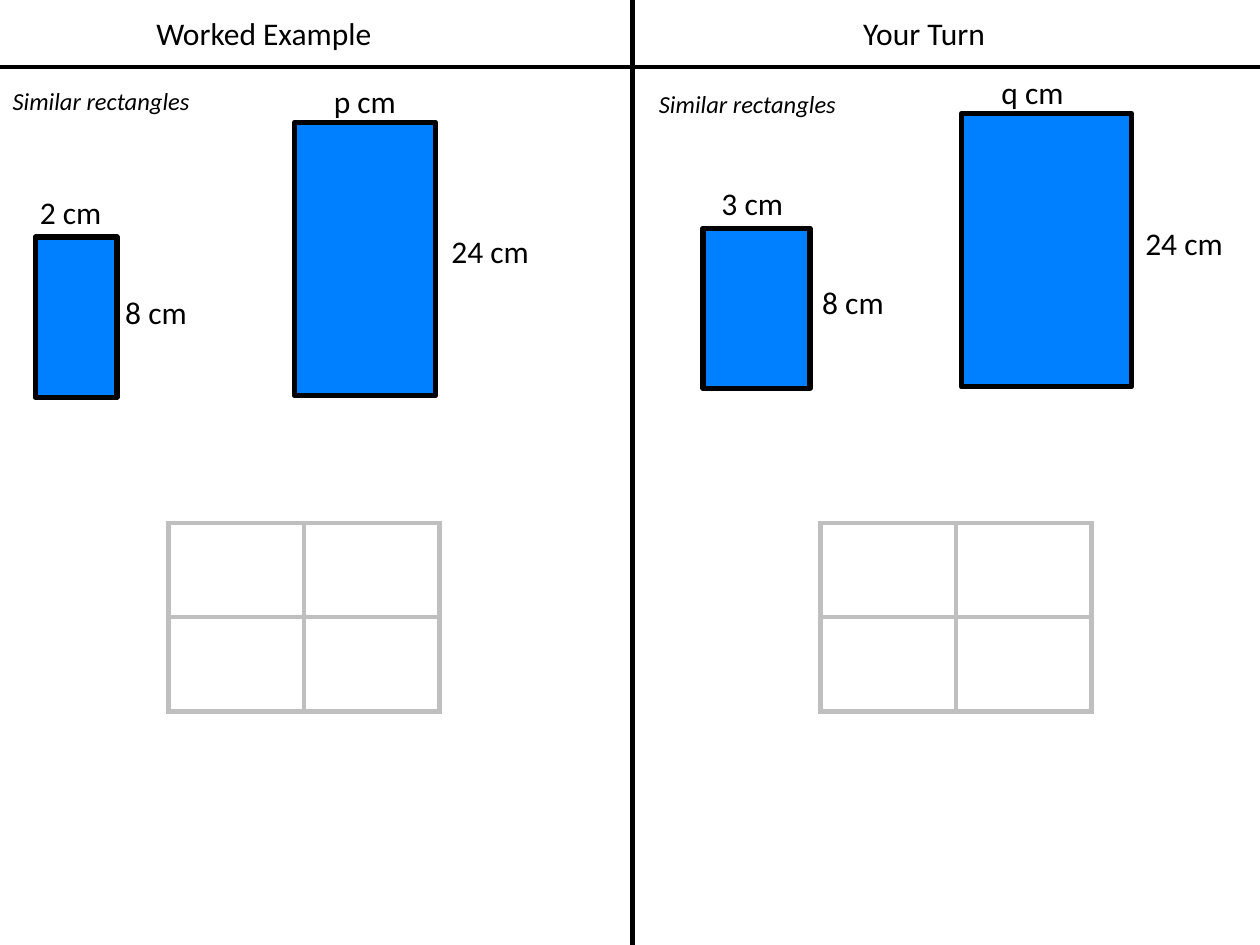
from dataclasses import dataclass

from lxml import etree
from pptx import Presentation
from pptx.dml.color import RGBColor
from pptx.enum import shapes, text
from pptx.oxml import ns
from pptx.util import Cm, Pt


@dataclass(frozen=True)
class Theme:
    font: str = "Calibri"
    ink: str = "000000"
    rectangle: str = "007FFF"
    grid: str = "BFBFBF"
    body_size: float = 18
    caption_size: float = 14
    divider_width: float = 2.5
    outline_width: float = 3


@dataclass(frozen=True)
class Label:
    """Words in a text box; lengths in cm."""
    words: str
    left: float
    top: float
    width: float
    height: float = 1.02


@dataclass(frozen=True)
class Rectangle:
    """A rectangle with its two side lengths; lengths in cm."""
    left: float
    top: float
    width: float
    height: float
    across: Label
    down: Label


@dataclass(frozen=True)
class Panel:
    heading: Label
    caption: Label
    rectangles: tuple[Rectangle, ...]
    grid_left: float


THEME = Theme()
SLIDE_WIDTH, SLIDE_HEIGHT = 25.4, 19.05
DIVIDER_X, DIVIDER_Y = 12.75, 1.35
GRID_TOP, GRID_COLUMN, GRID_ROW = 10.54, 2.73, 1.9

PANELS = (
    Panel(
        Label("Worked Example", 2.87, 0.15, 4.9),
        Label("Similar rectangles", -0.74, 1.6, 5.56, 0.86),
        (
            Rectangle(0.71, 4.78, 1.65, 3.23,
                      Label("2 cm", 0.46, 3.76, 1.93), Label("8 cm", 2.18, 5.79, 1.93)),
            Rectangle(5.94, 2.47, 2.84, 5.51,
                      Label("p cm", 6.15, 1.52, 2.41), Label("24 cm", 8.79, 4.55, 2.18)),
        ),
        3.4,
    ),
    Panel(
        Label("Your Turn", 16.18, 0.15, 4.9),
        Label("Similar rectangles", 12.29, 1.68, 5.56, 0.86),
        (
            Rectangle(14.17, 4.6, 2.16, 3.23,
                      Label("3 cm", 14.2, 3.58, 1.93), Label("8 cm", 16.23, 5.59, 1.93)),
            Rectangle(19.38, 2.29, 3.43, 5.51,
                      Label("q cm", 19.61, 1.35, 2.41), Label("24 cm", 22.78, 4.39, 2.18)),
        ),
        16.54,
    ),
)


def add_label(slide, label: Label, *, size: float = THEME.body_size,
              italic: bool = False) -> None:
    box = slide.shapes.add_textbox(
        Cm(label.left), Cm(label.top), Cm(label.width), Cm(label.height))
    frame = box.text_frame
    frame.word_wrap = True
    frame.auto_size = text.MSO_AUTO_SIZE.SHAPE_TO_FIT_TEXT
    paragraph = frame.paragraphs[0]
    paragraph.alignment = text.PP_ALIGN.CENTER
    run = paragraph.add_run()
    run.text = label.words
    run.font.name = THEME.font
    run.font.size = Pt(size)
    run.font.color.rgb = RGBColor.from_string(THEME.ink)
    if italic:
        run.font.italic = True


def style_line(line, width: float) -> None:
    line.color.rgb = RGBColor.from_string(THEME.ink)
    line.width = Pt(width)


def add_divider(slide, x1: float, y1: float, x2: float, y2: float) -> None:
    divider = slide.shapes.add_connector(
        shapes.MSO_CONNECTOR.STRAIGHT, Cm(x1), Cm(y1), Cm(x2), Cm(y2))
    style_line(divider.line, THEME.divider_width)
    etree.SubElement(divider._element.spPr, ns.qn("a:effectLst"))


def add_rectangle(slide, rectangle: Rectangle) -> None:
    body = slide.shapes.add_shape(
        shapes.MSO_SHAPE.RECTANGLE, Cm(rectangle.left), Cm(rectangle.top),
        Cm(rectangle.width), Cm(rectangle.height))
    body.shadow.inherit = False
    body.fill.solid()
    body.fill.fore_color.rgb = RGBColor.from_string(THEME.rectangle)
    style_line(body.line, THEME.outline_width)
    add_label(slide, rectangle.across)
    add_label(slide, rectangle.down)


def add_cell_borders(cell) -> None:
    properties = cell._tc.get_or_add_tcPr()
    for position, side in enumerate(("lnL", "lnR", "lnT", "lnB")):
        border = etree.Element(ns.qn(f"a:{side}"), w=str(Pt(THEME.outline_width)))
        fill = etree.SubElement(border, ns.qn("a:solidFill"))
        etree.SubElement(fill, ns.qn("a:srgbClr"), val=THEME.grid)
        properties.insert(position, border)


def add_ratio_grid(slide, left: float) -> None:
    grid = slide.shapes.add_table(
        2, 2, Cm(left), Cm(GRID_TOP), Cm(2 * GRID_COLUMN), Cm(2 * GRID_ROW)).table
    grid.first_row = False
    grid.horz_banding = False
    for cell in grid.iter_cells():
        cell.fill.background()
        add_cell_borders(cell)


def main() -> None:
    deck = Presentation()
    deck.slide_width, deck.slide_height = Cm(SLIDE_WIDTH), Cm(SLIDE_HEIGHT)
    slide = deck.slides.add_slide(deck.slide_layouts[6])

    add_divider(slide, DIVIDER_X, 0, DIVIDER_X, SLIDE_HEIGHT)
    add_divider(slide, 0, DIVIDER_Y, SLIDE_WIDTH, DIVIDER_Y)
    for panel in PANELS:
        add_label(slide, panel.heading)
        for rectangle in panel.rectangles:
            add_rectangle(slide, rectangle)
        add_ratio_grid(slide, panel.grid_left)
        add_label(slide, panel.caption, size=THEME.caption_size, italic=True)

    deck.save("out.pptx")


if __name__ == "__main__":
    main()
